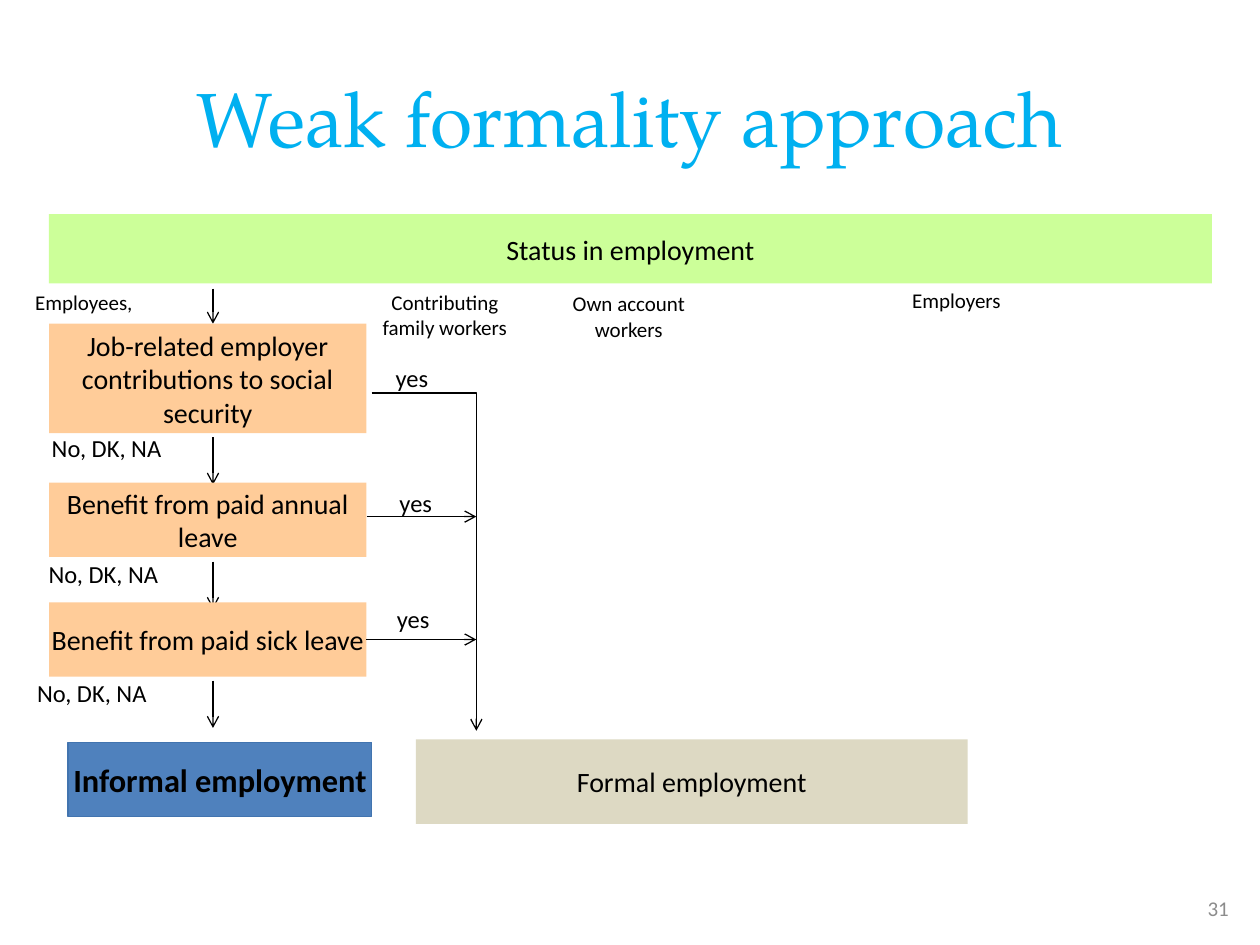
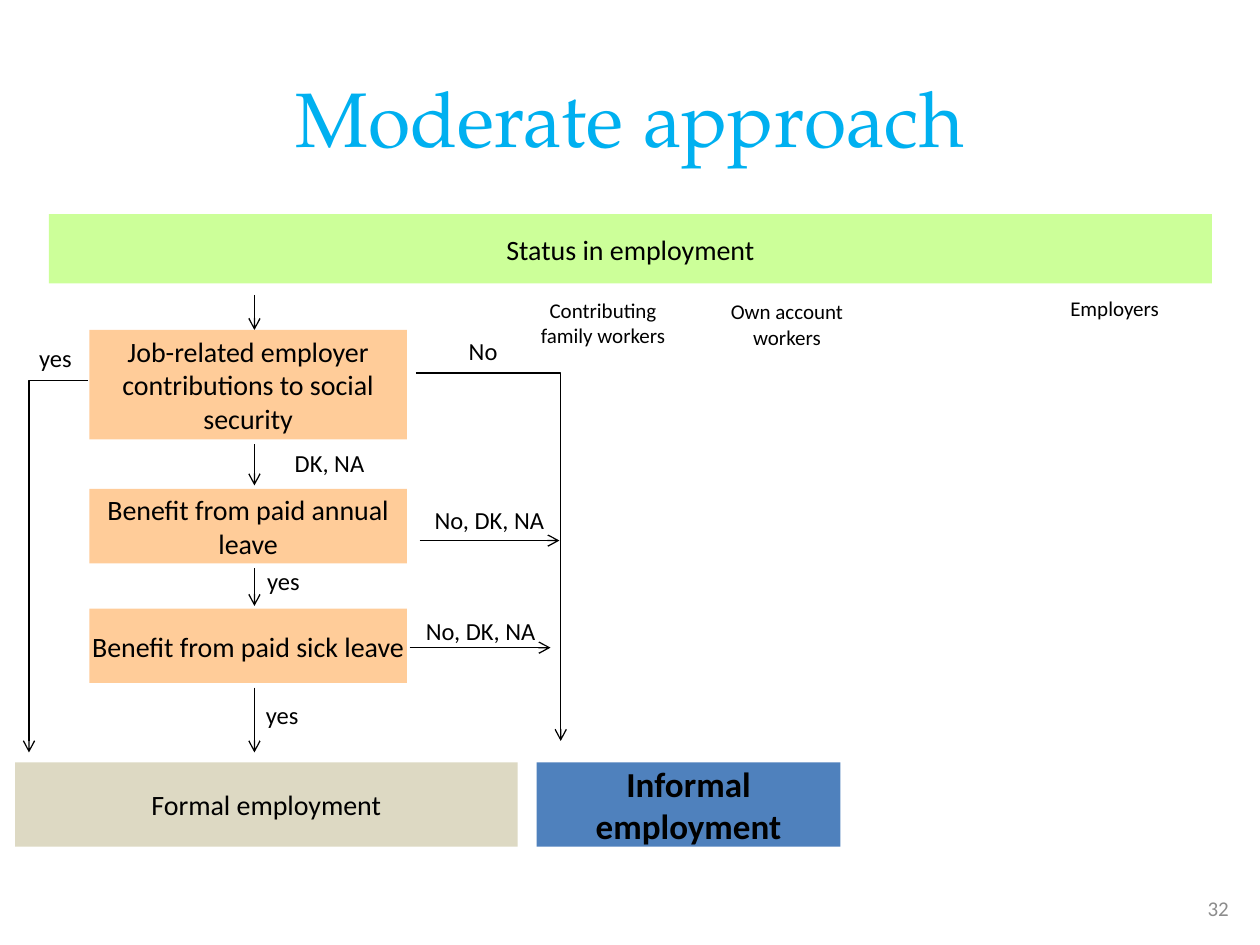
from pptx import Presentation
from pptx.dml.color import RGBColor
from pptx.enum.shapes import MSO_CONNECTOR as CONN, MSO_SHAPE as SHAPE
from pptx.enum.text import MSO_ANCHOR as ANCHOR, MSO_AUTO_SIZE as AUTO, PP_ALIGN as ALIGN
from pptx.oxml.ns import qn
from pptx.util import Pt
from lxml import etree

BLACK = RGBColor(0x00, 0x00, 0x00)
TITLE_BLUE = RGBColor(0x00, 0xB0, 0xF0)
GREY = RGBColor(0x8C, 0x8C, 0x8C)
GREEN = RGBColor(0xCC, 0xFF, 0x99)
ORANGE = RGBColor(0xFF, 0xCC, 0x99)
TAN = RGBColor(0xDD, 0xD9, 0xC3)
BLUE = RGBColor(0x4F, 0x81, 0xBD)
BLUE_EDGE = RGBColor(0x42, 0x74, 0xAF)
BODY_FONT = "Calibri"
TITLE_FONT = "TeX Gyre Pagella"

NONE, TIGHT, NORMAL = (0, 0), (1.5, 0.7), (7.2, 3.6)  # side and top insets

# Questions: text, top, height; groups: text, left, top (first slide)
QUESTIONS = [
    ("Job-related employer contributions to social security", 185, 62.6),
    ("Benefit from paid annual leave", 275.8, 42.5),
    ("Benefit from paid sick leave", 344.2, 42.5),
]
GROUPS = [
    ("Contributing family workers", 205.2, 162, 36),
    ("Own account workers", 310.3, 162.7, 36),
    ("Employers", 497.5, 160.6, 21.6),
]

SLIDES = [
    dict(
        title="Weak formality approach", number="31",
        question_x=28, question_dy=0, group_dx=0, group_dy=0,
        down_x=121.7, downs=[(165, 185), (250, 277), (321, 348), (389, 416)],
        across=[(209.5, 295.2, 272.2)],
        bent=[(212.4, 224.6, 272.2, 417.6)],
        formal=(237.6, 422.6, 315.4, 48.2),
        informal=(38.9, 424.1, 173.5, 42.5), informal_size=18.5,
        answers=[
            ("No, DK, NA", 16.6, 247, 88.6), ("yes", 220.3, 206.6, 30.2),
            ("yes", 222.5, 277.9, 30.2), ("yes", 220.3, 344.2, 31.7),
            ("No, DK, NA", 13, 319, 92.2), ("No, DK, NA", 8.6, 386.6, 87.8),
        ],
    ),
    dict(
        title="Moderate approach", number="32",
        question_x=51.1, question_dy=3.6, group_dx=90.4, group_dy=4.6,
        down_x=145.4, downs=[(168.5, 188.6), (254, 277.4), (324.7, 346.3), (393, 430)],
        across=[(239.8, 308.9, 319.7), (234, 370.1, 314.6)],
        bent=[(50.4, 217.4, 16.6, 430), (237.6, 213.1, 320.4, 423.4)],
        formal=(8.6, 435.6, 287.3, 48.2),
        informal=(306.7, 435.6, 173.5, 48.2), informal_size=20,
        answers=[
            ("yes", 16.6, 195.1, 30.2), ("yes", 146.9, 322.6, 30.2),
            ("yes", 145.4, 399.6, 31.7), ("No, DK, NA", 239, 288, 81.4),
            ("No, DK, NA", 234, 351.4, 81.4), ("No", 235.4, 191.5, 81.4),
        ],
    ),
]


def write(sp, text, size, insets=NORMAL, anchor=ANCHOR.TOP, align=ALIGN.CENTER,
          color=BLACK, name=BODY_FONT, bold=False, wrap=True):
    tf = sp.text_frame
    tf.text = text
    side, top = Pt(insets[0]), Pt(insets[1])
    frame = dict(word_wrap=wrap, auto_size=AUTO.NONE, vertical_anchor=anchor,
                 margin_left=side, margin_right=side, margin_top=top, margin_bottom=top)
    for key, value in frame.items():
        setattr(tf, key, value)
    p = tf.paragraphs[0]
    p.alignment, p.space_before = align, Pt(0)
    font = p.runs[0].font
    for key, value in dict(name=name, size=Pt(size), bold=bold).items():
        setattr(font, key, value)
    font.color.rgb = color


def arrow(s, x1, y1, x2, y2, kind=CONN.STRAIGHT):
    c = s.shapes.add_connector(kind, Pt(x1), Pt(y1), Pt(x2), Pt(y2))
    c.line.color.rgb, c.line.width = BLACK, Pt(0.75)
    spPr = c._element.spPr
    etree.SubElement(spPr.find(qn("a:ln")), qn("a:tailEnd"), type="arrow")
    etree.SubElement(spPr, qn("a:effectLst"))
    if kind == CONN.ELBOW:  # a single corner
        spPr.find(qn("a:prstGeom")).set("prst", "bentConnector2")
    return c


prs = Presentation()
prs.slide_width, prs.slide_height = Pt(720), Pt(540)

for d in SLIDES:
    s = prs.slides.add_slide(prs.slide_layouts[1])
    title, body = s.shapes.title, s.placeholders[1]

    # Title and slide number
    title.left, title.top, title.width, title.height = Pt(36), Pt(21.6), Pt(648), Pt(90)
    write(title, d["title"], 44, anchor=ANCHOR.MIDDLE, color=TITLE_BLUE, name=TITLE_FONT)
    sp = s.shapes.add_textbox(Pt(638), Pt(508.3), Pt(71.3), Pt(20.9))
    write(sp, d["number"], 12, anchor=ANCHOR.MIDDLE, align=ALIGN.RIGHT, color=GREY)

    # Arrows, behind the boxes
    for y1, y2 in d["downs"]:
        arrow(s, d["down_x"], y1, d["down_x"], y2)
    for x1, y, x2 in d["across"]:
        arrow(s, x1, y, x2, y)
    for points in d["bent"]:
        arrow(s, *points, kind=CONN.ELBOW)

    # Boxes of the flow chart
    boxes = [("Status in employment", (28, 122.4, 664.6, 39.6), GREEN, NONE),
             ("Formal employment", d["formal"], TAN, NONE)]
    boxes += [(text, (d["question_x"], y + d["question_dy"], 181.4, h), ORANGE, TIGHT)
              for text, y, h in QUESTIONS]
    for text, place, fill, insets in boxes:
        sp = s.shapes.add_shape(SHAPE.RECTANGLE, *map(Pt, place))
        sp.shadow.inherit = False
        sp.fill.solid()
        sp.fill.fore_color.rgb = fill
        sp.line.fill.background()
        write(sp, text, 16, insets, ANCHOR.MIDDLE)
    sick_leave = sp

    # Employment groups
    for text, x, y, h in GROUPS:
        sp = s.shapes.add_textbox(Pt(x + d["group_dx"]), Pt(y + d["group_dy"]), Pt(98), Pt(h))
        write(sp, text, 12)

    # Answers beside the arrows
    for text, x, y, w in d["answers"]:
        sp = s.shapes.add_textbox(Pt(x), Pt(y), Pt(w), Pt(18.7))
        write(sp, text, 14, TIGHT)

    # Informal outcome and the body placeholder
    if d["number"] == "31":
        informal = body
        sp = s.shapes.add_textbox(Pt(13), Pt(162), Pt(73.4), Pt(21.6))
        write(sp, "Employees,", 12, align=ALIGN.LEFT, wrap=False)
        c = arrow(s, 209.5, 365.45, 272.2, 365.45)
        c.begin_connect(sick_leave, 3)
    else:
        informal = s.shapes.add_shape(SHAPE.RECTANGLE, 0, 0, 0, 0)
        informal.shadow.inherit = False
        body.left, body.top, body.width, body.height = Pt(147.6), Pt(255), Pt(81.4), Pt(18.7)
        write(body, "DK, NA", 14, TIGHT)
    informal.left, informal.top, informal.width, informal.height = map(Pt, d["informal"])
    informal.fill.solid()
    informal.fill.fore_color.rgb = BLUE
    write(informal, "Informal employment", d["informal_size"], NONE, ANCHOR.MIDDLE, bold=True)
    if informal is body:
        body.line.color.rgb, body.line.width = BLUE_EDGE, Pt(0.75)
    else:
        informal.line.fill.background()

    # No bullet or indent in the body placeholder
    pPr = body.text_frame.paragraphs[0]._p.get_or_add_pPr()
    pPr.set("marL", "0")
    pPr.set("indent", "0")
    etree.SubElement(pPr, qn("a:buNone"))

prs.save("out.pptx")
